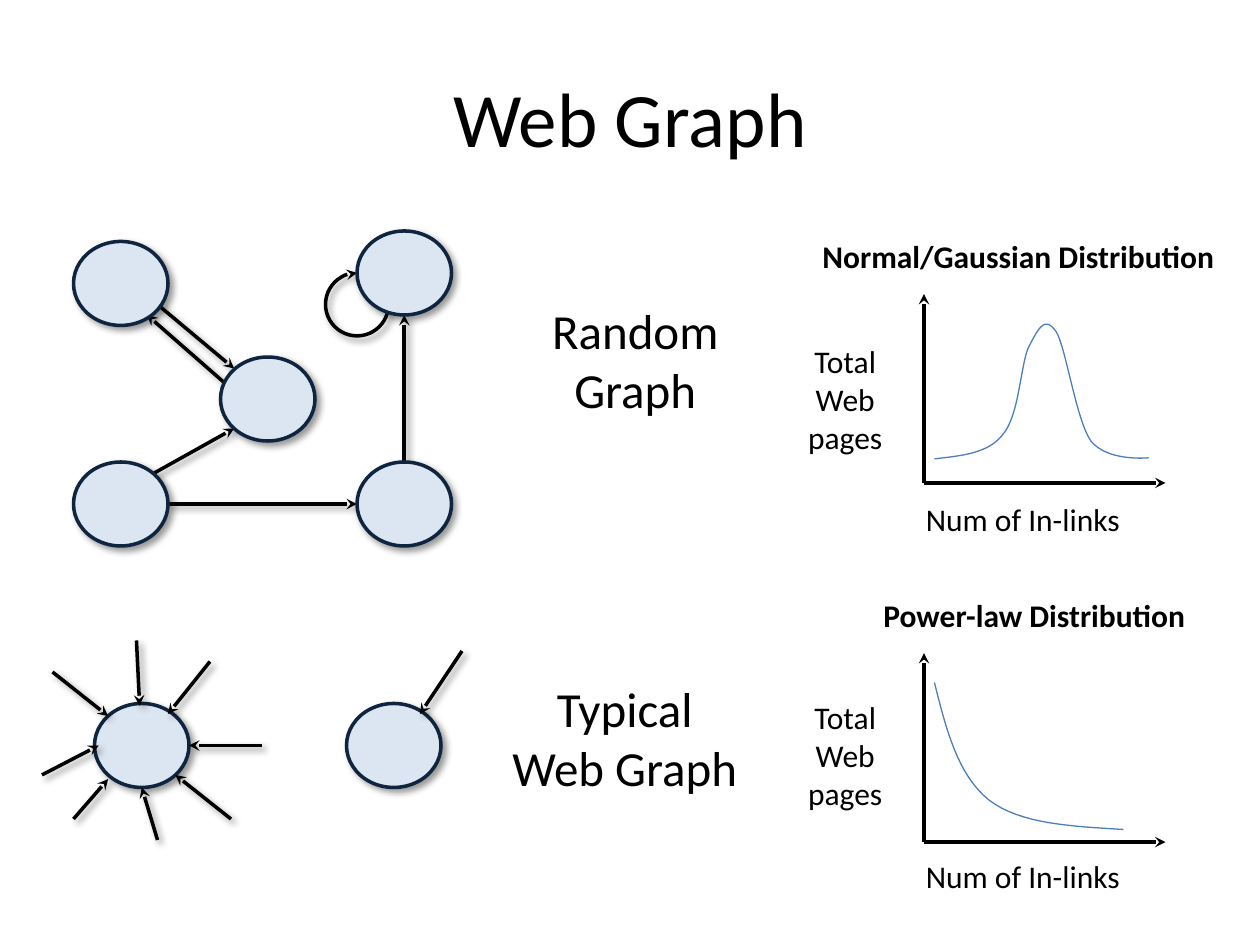
"""Build the Web Graph slide on a grid of 120 columns by 90 rows."""
from dataclasses import dataclass
from typing import NamedTuple

import lxml.etree
import pptx
import pptx.dml.color
import pptx.enum.shapes
import pptx.enum.text
import pptx.oxml.ns
import pptx.util

COLUMNS, ROWS = 120, 90
NODE_COLUMNS, NODE_ROWS = 9, 8
AXIS_COLUMNS, AXIS_ROWS = 23, 18
AXIS_COLUMN = 88
BLACK, NODE_FILL, NODE_LINE, CURVE_LINE = "000000", "DCE6F2", "0F243E", "4B7EBC"
CENTER = pptx.enum.text.PP_ALIGN.CENTER
LEFT = pptx.enum.text.PP_ALIGN.LEFT
SHAPES = pptx.enum.shapes.MSO_SHAPE


class Point(NamedTuple):
    """A place on the grid."""
    column: float
    row: float


class Edge(NamedTuple):
    """An arrow from one place to another."""
    start: Point
    end: Point


class Label(NamedTuple):
    """A text with its box and look."""
    text: str
    column: float
    row: float
    columns: float
    rows: float
    size: int = 18
    bold: bool = False
    align: object = CENTER


@dataclass
class Plot:
    """A sketched distribution; its curve is a start and then cubic Bezier triples."""
    heading: Label
    origin_row: float
    y_label_row: float
    x_label_row: float
    curve: list[tuple[float, float]]


RANDOM_EDGES = [
    Edge(Point(14.6, 45.1), Point(22.3, 40.8)),
    Edge(Point(16, 48), Point(34, 48)),
    Edge(Point(15, 29), Point(22.3, 35.1)),
    Edge(Point(22, 37), Point(14, 30)),
    Edge(Point(38.5, 44), Point(38.5, 30)),
]
RANDOM_NODES = [Point(34, 44), Point(7, 44), Point(34, 22), Point(21, 34), Point(7, 23)]
TYPICAL_NODES = [Point(9, 67), Point(33, 67)]
TYPICAL_EDGES = [
    Edge(Point(5, 64), Point(10.3, 68.2)),
    Edge(Point(20, 63), Point(16, 68)),
    Edge(Point(13, 61), Point(13.3, 67.2)),
    Edge(Point(4, 73.8), Point(9.4, 71)),
    Edge(Point(7, 78), Point(10.3, 74.2)),
    Edge(Point(15, 80), Point(13.5, 75)),
    Edge(Point(22, 78), Point(16.7, 73.8)),
    Edge(Point(25, 71), Point(18, 71)),
    Edge(Point(44, 62), Point(40, 68)),
]
GRAPH_NAMES = [
    Label("Random Graph", 51, 28, 19, 12.5, 28),
    Label("Typical Web Graph", 47, 64, 25, 12.5, 28),
]
PLOTS = [
    Plot(Label("Normal/Gaussian Distribution", 76, 22, 42, 4.8, bold=True), 46, 32, 47,
         [(89, 43.7), (91.6, 43.4), (94.1, 43.2), (95.5, 41.4),
          (97.1, 39.6), (97.2, 34.6), (98, 33),
          (98.9, 31.3), (99.5, 30), (100.6, 31.6),
          (101.5, 33), (102.5, 40), (103.9, 42),
          (105.5, 44), (109.4, 43.6), (109.4, 43.6)]),
    Plot(Label("Power-law Distribution", 82, 56.2, 33, 4.8, bold=True), 80.2, 65.9, 81,
         [(89, 65), (90.1, 69.4), (91.2, 73.8), (94.2, 76.2),
          (97.2, 78.5), (102.1, 78.7), (107, 79)]),
]

presentation = pptx.Presentation()
presentation.slide_width = pptx.util.Inches(10)
presentation.slide_height = pptx.util.Inches(7.5)
slide = presentation.slides.add_slide(presentation.slide_layouts[5])


def across(columns: float) -> int:
    """Turn columns into a length."""
    return round(presentation.slide_width * columns / COLUMNS)


def down(rows: float) -> int:
    """Turn rows into a length."""
    return round(presentation.slide_height * rows / ROWS)


def rgb(color: str) -> pptx.dml.color.RGBColor:
    """Turn a hex string into a colour."""
    return pptx.dml.color.RGBColor.from_string(color)


def add_xml(parent, tag: str, **attributes: str):
    """Append a drawing element to its parent."""
    return lxml.etree.SubElement(parent, pptx.oxml.ns.qn(tag), attributes)


def set_line(shape, color: str, width: float = 2, arrow: bool = False) -> None:
    """Set the outline and, if asked, an arrowhead at its end."""
    shape.line.color.rgb = rgb(color)
    shape.line.width = pptx.util.Pt(width)
    if arrow:
        outline = shape.element.spPr.find(pptx.oxml.ns.qn("a:ln"))
        add_xml(outline, "a:tailEnd", type="stealth")


def set_shadow(shape, shown: bool = True) -> None:
    """Give the shape a soft shadow, or none."""
    effects = add_xml(shape.element.spPr, "a:effectLst")
    if shown:
        shadow = add_xml(effects, "a:outerShdw", blurRad=str(pptx.util.Pt(4)),
                         dist=str(pptx.util.Pt(3)), dir=str(45 * 60000),
                         algn="tl", rotWithShape="0")
        add_xml(add_xml(shadow, "a:srgbClr", val=BLACK), "a:alpha", val="40000")


def draw_edge(edge: Edge, shadow: bool = True) -> None:
    """Draw a straight arrow."""
    connector = slide.shapes.add_connector(
        pptx.enum.shapes.MSO_CONNECTOR.STRAIGHT,
        across(edge.start.column), down(edge.start.row),
        across(edge.end.column), down(edge.end.row))
    set_line(connector, BLACK, arrow=True)
    set_shadow(connector, shadow)


def draw_node(place: Point) -> None:
    """Draw a page as an ellipse."""
    node = slide.shapes.add_shape(SHAPES.OVAL, across(place.column), down(place.row),
                                  across(NODE_COLUMNS), down(NODE_ROWS))
    node.fill.solid()
    node.fill.fore_color.rgb = rgb(NODE_FILL)
    set_line(node, NODE_LINE)
    set_shadow(node)


def draw_self_link(place: Point, side: float) -> None:
    """Draw the three-quarter loop of a page that links to itself."""
    loop = slide.shapes.add_shape(SHAPES.ARC, across(place.column), down(place.row),
                                  across(side), down(side))
    loop.rotation = 90
    loop.adjustments[0], loop.adjustments[1] = 162, 108
    loop.fill.background()
    set_line(loop, BLACK, arrow=True)
    set_shadow(loop)


def write(frame, text: str, size: int, bold: bool, align) -> None:
    """Write one formatted paragraph."""
    frame.word_wrap = True
    paragraph = frame.paragraphs[0]
    paragraph.text = text
    paragraph.alignment = align
    font = paragraph.font
    font.name, font.size, font.bold = "Calibri", pptx.util.Pt(size), bold
    font.color.rgb = rgb(BLACK)


def draw_label(label: Label) -> None:
    """Draw a text box."""
    box = slide.shapes.add_textbox(across(label.column), down(label.row),
                                   across(label.columns), down(label.rows))
    write(box.text_frame, label.text, label.size, label.bold, label.align)


def draw_curve(points: list[tuple[float, float]], steps: int = 16) -> None:
    """Draw chained Bezier curves as one open outline."""
    places = []
    for first in range(0, len(points) - 1, 3):
        for step in range(1, steps + 1):
            t = step / steps
            weights = ((1 - t) ** 3, 3 * t * (1 - t) ** 2, 3 * t * t * (1 - t), t ** 3)
            column, row = (sum(w * v for w, v in zip(weights, values))
                           for values in zip(*points[first:first + 4]))
            places.append((across(column), down(row)))
    builder = slide.shapes.build_freeform(across(points[0][0]), down(points[0][1]))
    builder.add_line_segments(places, close=False)
    curve = builder.convert_to_shape()
    curve.fill.background()
    set_line(curve, CURVE_LINE, 0.75)
    set_shadow(curve, False)


def draw_plot(plot: Plot) -> None:
    """Draw axes, curve and labels of a distribution."""
    origin = Point(AXIS_COLUMN, plot.origin_row)
    draw_edge(Edge(origin, Point(AXIS_COLUMN, plot.origin_row - AXIS_ROWS)), shadow=False)
    draw_edge(Edge(origin, Point(AXIS_COLUMN + AXIS_COLUMNS, plot.origin_row)), shadow=False)
    draw_curve(plot.curve)
    draw_label(plot.heading)
    draw_label(Label("Total\nWeb pages", 74, plot.y_label_row, 13, 12.1))
    draw_label(Label("Num of In-links", 87, plot.x_label_row, 26, 4.8, align=LEFT))


title = slide.shapes.title
title.left, title.top, title.width, title.height = across(6), down(3.6), across(108), down(15)
title.text_frame.vertical_anchor = pptx.enum.text.MSO_ANCHOR.MIDDLE
write(title.text_frame, "Web Graph", 44, False, CENTER)
for link in RANDOM_EDGES:
    draw_edge(link)
draw_self_link(Point(31, 26), 6)
for page in RANDOM_NODES + TYPICAL_NODES:
    draw_node(page)
for link in TYPICAL_EDGES:
    draw_edge(link)
for graph_name in GRAPH_NAMES:
    draw_label(graph_name)
for distribution in PLOTS:
    draw_plot(distribution)
presentation.save("out.pptx")
